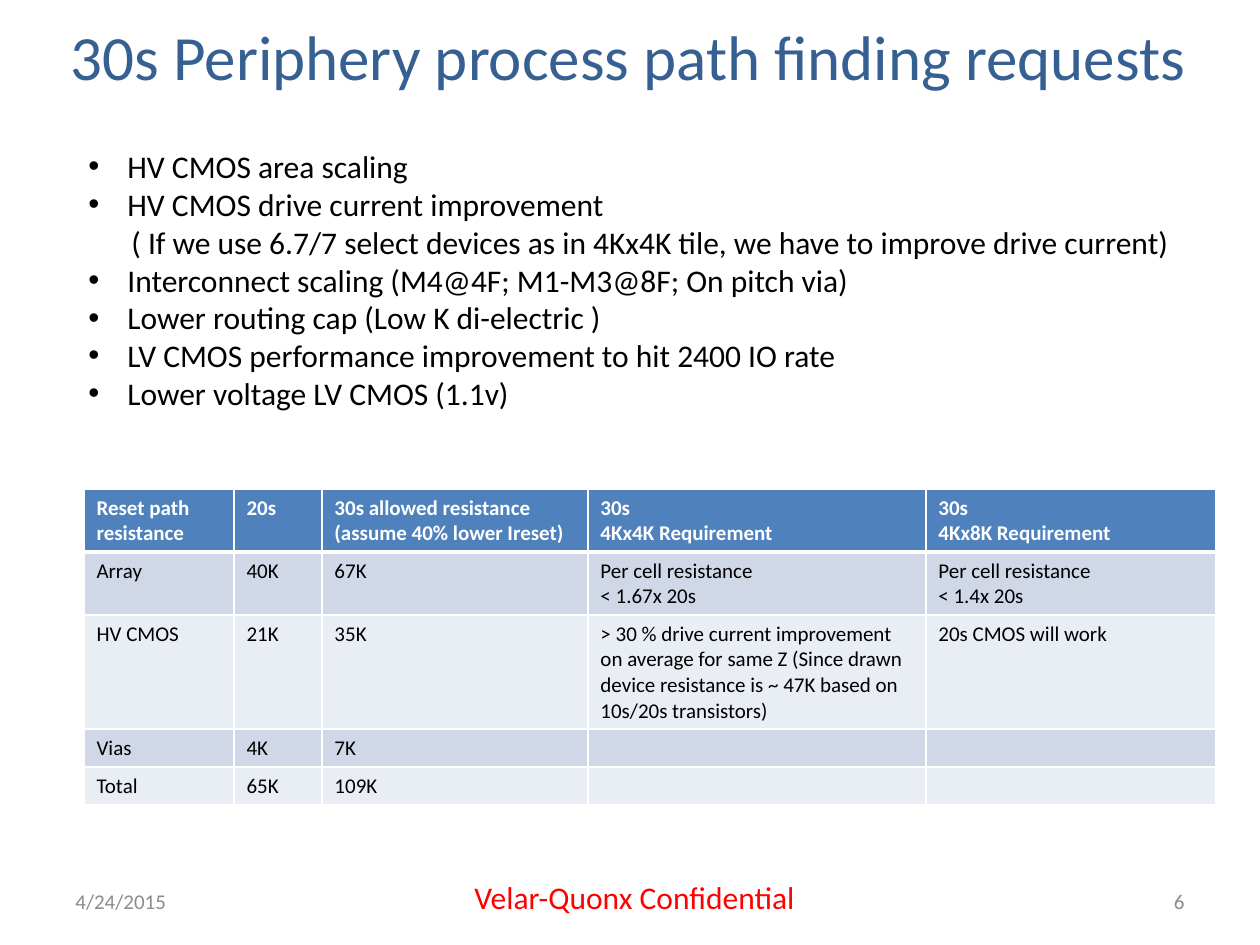
from dataclasses import dataclass

from lxml.etree import SubElement
from pptx import Presentation
from pptx.dml.color import RGBColor
from pptx.enum.text import MSO_ANCHOR as Anchor, PP_ALIGN as Align
from pptx.oxml.ns import qn
from pptx.util import Pt

EMU_PER_PX = 914400 / 126


@dataclass(frozen=True)
class Theme:
    font: str = "Calibri"
    title: str = "376092"
    body: str = "000000"
    notice: str = "FF0000"
    footer: str = "8C8C8C"
    white: str = "FFFFFF"
    header: str = "4F81BD"
    bands: tuple = ("D0D8E8", "E9EDF4")
    title_size: int = 36
    body_size: int = 18
    small_size: int = 12


THEME = Theme()

REQUESTS = [
    ("HV CMOS area scaling", True),
    ("HV CMOS drive current improvement", True),
    ("( If we use 6.7/7 select devices as in 4Kx4K tile, we have to improve drive current)", False),
    ("Interconnect scaling (M4@4F; M1-M3@8F; On pitch via)", True),
    ("Lower routing cap (Low K di-electric )", True),
    ("LV CMOS performance improvement to hit 2400 IO rate", True),
    ("Lower voltage LV CMOS (1.1v)", True),
]

RESISTANCE = [
    ["Reset path resistance", "20s", "30s allowed resistance\n(assume 40% lower Ireset)",
     "30s\n4Kx4K Requirement", "30s\n4Kx8K Requirement"],
    ["Array", "40K", "67K", "Per cell resistance\n< 1.67x 20s", "Per cell resistance\n< 1.4x 20s"],
    ["HV CMOS", "21K", "35K",
     "> 30 % drive current improvement on average for same Z "
     "(Since drawn device resistance is ~ 47K based on 10s/20s transistors)",
     "20s CMOS will work"],
    ["Vias", "4K", "7K", "", ""],
    ["Total", "65K", "109K", "", ""],
]
COLUMN_WIDTHS = [150, 88, 266, 338, 290]
ROW_HEIGHTS = [62, 63, 114, 38, 37]


def px(length):
    return round(length * EMU_PER_PX)


def write(frame, text, *, size, color, bold=False, align=Align.LEFT):
    for index, line in enumerate(text.split("\n")):
        paragraph = frame.paragraphs[0] if index == 0 else frame.add_paragraph()
        paragraph.alignment = align
        if not line:
            SubElement(paragraph._p, qn("a:endParaRPr"), sz=str(size * 100))
            continue
        run = paragraph.add_run()
        run.text = line
        font = run.font
        font.name, font.size, font.bold = THEME.font, Pt(size), bold
        font.color.rgb = RGBColor.from_string(color)


def add_text(slide, bounds, text, *, anchor=Anchor.MIDDLE, wrap=True, **style):
    frame = slide.shapes.add_textbox(*map(px, bounds)).text_frame
    frame.word_wrap = wrap
    frame.vertical_anchor = anchor
    write(frame, text, **style)
    return frame


def indent(paragraph, bulleted):
    properties = paragraph._p.get_or_add_pPr()
    left, first = (102, -39) if bulleted else (106, 0)
    properties.set("marL", str(px(left)))
    properties.set("indent", str(px(first)))
    if bulleted:
        SubElement(properties, qn("a:buFont"), typeface="Arial")
        SubElement(properties, qn("a:buChar"), char="•")
    else:
        SubElement(properties, qn("a:buNone"))


def add_requests(slide, bounds):
    text = "\n".join(line for line, _ in REQUESTS)
    frame = add_text(slide, bounds, text, anchor=Anchor.TOP,
                     size=THEME.body_size, color=THEME.body)
    for paragraph, (_, bulleted) in zip(frame.paragraphs, REQUESTS):
        indent(paragraph, bulleted)


def set_borders(cell, top, bottom):
    properties = cell._tc.get_or_add_tcPr()
    for side, width in (("L", 1), ("R", 1), ("T", top), ("B", bottom)):
        border = SubElement(properties, qn(f"a:ln{side}"), w=str(Pt(width)))
        SubElement(SubElement(border, qn("a:solidFill")), qn("a:srgbClr"), val=THEME.white)


def add_resistance_table(slide, left, top):
    bounds = (left, top, sum(COLUMN_WIDTHS), sum(ROW_HEIGHTS))
    table = slide.shapes.add_table(
        len(ROW_HEIGHTS), len(COLUMN_WIDTHS), *map(px, bounds)).table
    for column, width in zip(table.columns, COLUMN_WIDTHS):
        column.width = px(width)
    for r, (row, height) in enumerate(zip(table.rows, ROW_HEIGHTS)):
        row.height = px(height)
        is_header = r == 0
        fill = THEME.header if is_header else THEME.bands[(r - 1) % 2]
        for cell, text in zip(row.cells, RESISTANCE[r]):
            set_borders(cell, top=3 if r == 1 else 1, bottom=3 if is_header else 1)
            cell.fill.solid()
            cell.fill.fore_color.rgb = RGBColor.from_string(fill)
            write(cell.text_frame, text, size=THEME.small_size, bold=is_header,
                  color=THEME.white if is_header else THEME.body)


def main():
    deck = Presentation()
    deck.slide_width, deck.slide_height = px(1260), px(945)
    slide = deck.slides.add_slide(deck.slide_layouts[6])
    footer = dict(size=THEME.small_size, color=THEME.footer)

    add_text(slide, (462, 872, 349, 50), "Velar-Quonx Confidential", anchor=Anchor.TOP,
             wrap=False, size=THEME.body_size, color=THEME.notice)
    add_text(slide, (44, 33, 1169, 44), "30s Periphery process path finding requests",
             size=THEME.title_size, color=THEME.title, align=Align.CENTER)
    add_text(slide, (63, 876, 294, 50), "4/24/2015", **footer)
    add_text(slide, (903, 876, 294, 50), "6", align=Align.RIGHT, **footer)
    add_requests(slide, (13, 141, 1231, 314))
    add_resistance_table(slide, 84, 489)
    deck.save("out.pptx")


if __name__ == "__main__":
    main()
